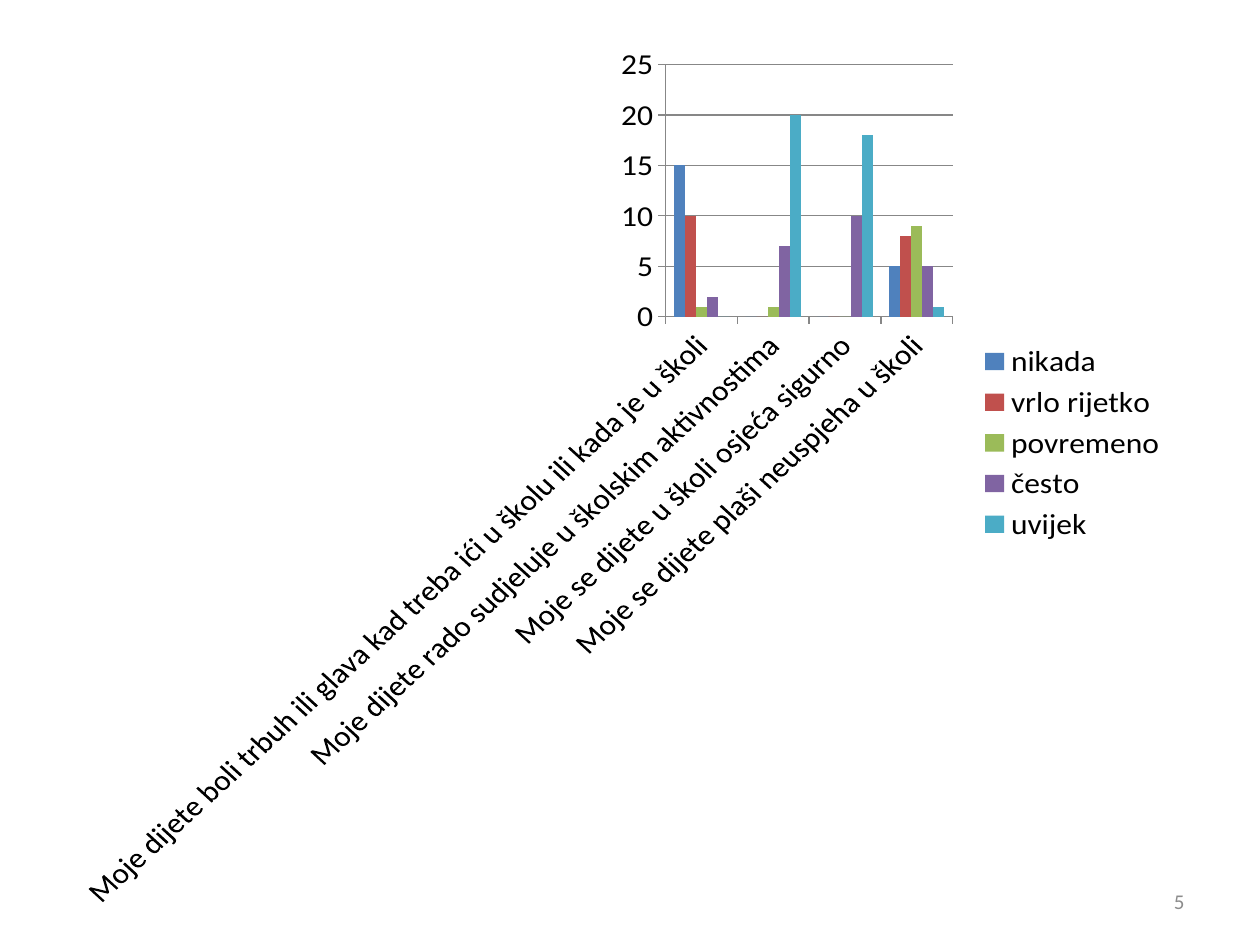
from typing import NamedTuple

from pptx import Presentation
from pptx.chart.data import CategoryChartData
from pptx.dml.color import RGBColor
from pptx.enum.chart import XL_CHART_TYPE, XL_LEGEND_POSITION, XL_TICK_MARK
from pptx.enum.text import MSO_ANCHOR, PP_ALIGN
from pptx.util import Emu, Pt

PX_PER_INCH = 126
EMU_PER_PX = 914400 / PX_PER_INCH
FONT = "Calibri"
COLORS = {
    "text": "000000",
    "number": "8C8C8C",
    "line": "878787",
    "nikada": "4F81BD",
    "vrlo rijetko": "C0504D",
    "povremeno": "9BBB59",
    "često": "8064A2",
    "uvijek": "4BACC6",
}


class Box(NamedTuple):
    left: int
    top: int
    width: int
    height: int


class Answer(NamedTuple):
    name: str
    counts: tuple[int, ...]


STATEMENTS = (
    "Moje dijete boli trbuh ili glava kad treba ići u školu ili kada je u školi",
    "Moje dijete rado sudjeluje u školskim aktivnostima",
    "Moje se dijete u školi osjeća sigurno",
    "Moje se dijete plaši neuspjeha u školi",
)
ANSWERS = (
    Answer("nikada", (15, 0, 0, 5)),
    Answer("vrlo rijetko", (10, 0, 0, 8)),
    Answer("povremeno", (1, 1, 0, 9)),
    Answer("često", (2, 7, 10, 5)),
    Answer("uvijek", (0, 20, 18, 1)),
)


def px(length: int) -> Emu:
    return Emu(round(length * EMU_PER_PX))


def place(box: Box) -> tuple[Emu, ...]:
    return tuple(px(length) for length in box)


def color(name: str) -> RGBColor:
    return RGBColor.from_string(COLORS[name])


def format_font(font, size: int, color_name: str) -> None:
    font.name = FONT
    font.size = Pt(size)
    font.color.rgb = color(color_name)


def format_line(line) -> None:
    line.color.rgb = color("line")
    line.width = Pt(0.75)


def add_survey_chart(slide, box: Box) -> None:
    data = CategoryChartData()
    data.categories = STATEMENTS
    for answer in ANSWERS:
        data.add_series(answer.name, answer.counts)
    chart = slide.shapes.add_chart(
        XL_CHART_TYPE.COLUMN_CLUSTERED, *place(box), data
    ).chart
    chart.has_title = False
    format_font(chart.font, 18, "text")

    # Columns
    plot = chart.plots[0]
    plot.vary_by_categories = False
    plot.gap_width = 150
    plot.overlap = 0
    for series in plot.series:
        series.format.fill.solid()
        series.format.fill.fore_color.rgb = color(series.name)

    # Axes
    for axis in (chart.category_axis, chart.value_axis):
        axis.major_tick_mark = XL_TICK_MARK.OUTSIDE
        axis.minor_tick_mark = XL_TICK_MARK.NONE
        format_line(axis.format.line)
        format_font(axis.tick_labels.font, 18, "text")
    # Slanted statements: 45 degrees, in 1/60000 of a degree
    label_body = chart.category_axis._element.txPr.bodyPr
    label_body.set("rot", str(-45 * 60000))
    label_body.set("vert", "horz")
    value_axis = chart.value_axis
    value_axis.minimum_scale, value_axis.maximum_scale = 0, 25
    value_axis.major_unit = 5
    value_axis.has_major_gridlines = True
    format_line(value_axis.major_gridlines.format.line)

    # Legend
    chart.has_legend = True
    chart.legend.position = XL_LEGEND_POSITION.RIGHT
    chart.legend.include_in_layout = False
    format_font(chart.legend.font, 18, "text")


def add_slide_number(slide, box: Box, number: str) -> None:
    frame = slide.shapes.add_textbox(*place(box)).text_frame
    frame.word_wrap = True
    frame.vertical_anchor = MSO_ANCHOR.MIDDLE
    paragraph = frame.paragraphs[0]
    paragraph.alignment = PP_ALIGN.RIGHT
    run = paragraph.add_run()
    run.text = number
    format_font(run.font, 12, "number")


def main() -> None:
    presentation = Presentation()
    presentation.slide_width = px(1260)
    presentation.slide_height = px(945)
    slide = presentation.slides.add_slide(presentation.slide_layouts[6])
    add_survey_chart(slide, Box(69, 47, 1111, 862))
    add_slide_number(slide, Box(903, 876, 294, 50), "5")
    presentation.save("out.pptx")


if __name__ == "__main__":
    main()
